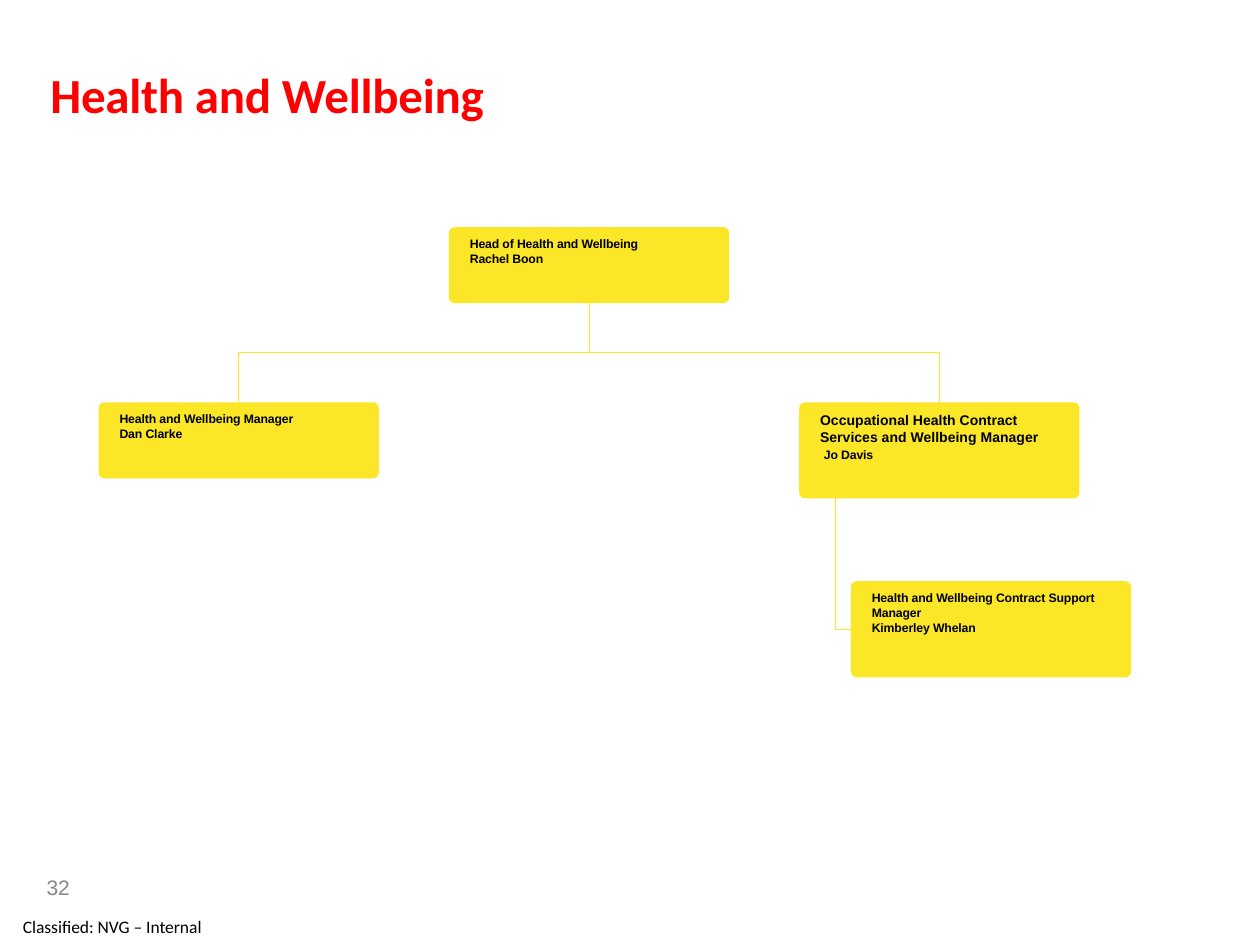
from dataclasses import dataclass

from pptx import Presentation
from pptx.dml.color import RGBColor
from pptx.enum.shapes import MSO_SHAPE
from pptx.enum.text import MSO_ANCHOR, PP_ALIGN
from pptx.util import Inches, Pt

ROUNDED = MSO_SHAPE.ROUNDED_RECTANGLE
TOP, MIDDLE = MSO_ANCHOR.TOP, MSO_ANCHOR.MIDDLE
LEFT, CENTER = PP_ALIGN.LEFT, PP_ALIGN.CENTER


@dataclass(frozen=True)
class Theme:
    """Colours, fonts, type sizes and letter spacing of the slide."""

    yellow: RGBColor = RGBColor(0xFB, 0xE6, 0x27)
    red: RGBColor = RGBColor(0xFF, 0x00, 0x00)
    black: RGBColor = RGBColor(0x00, 0x00, 0x00)
    grey: RGBColor = RGBColor(0x88, 0x88, 0x88)
    heading_font: str = "Calibri"
    body_font: str = "Arial"
    title_size: float = 28
    number_size: float = 12
    footer_size: float = 10
    large_role_size: float = 8
    card_size: float = 7
    tracking: int = -10
    card_tracking: int = -5


THEME = Theme()
CARD_WIDTH = 2.19
SHORT_CARD, TALL_CARD = 0.57, 0.73


def style_paragraph(paragraph, font_name, size, color, bold=False, tracking=0):
    """Format every run of a paragraph."""
    for run in paragraph.runs:
        run.font.name = font_name
        run.font.size = Pt(size)
        run.font.bold = bold
        run.font.color.rgb = color
        if tracking:
            run.font._element.set("spc", str(tracking))


def add_label(slide, box, text, font_name, size, color, bold=False,
              alignment=LEFT, anchor=TOP, tracking=0):
    """Place one line of text in a box without margins."""
    shape = slide.shapes.add_textbox(*map(Inches, box))
    frame = shape.text_frame
    frame.margin_left = frame.margin_right = 0
    frame.margin_top = frame.margin_bottom = 0
    frame.word_wrap = True
    frame.vertical_anchor = anchor
    frame.text = text
    paragraph = frame.paragraphs[0]
    paragraph.alignment = alignment
    style_paragraph(paragraph, font_name, size, color, bold, tracking)


def add_card(slide, left, top, height, role, person, large_role=False):
    """Place a yellow card with a role and the person who holds it."""
    box = (left, top, CARD_WIDTH, height)
    shape = slide.shapes.add_shape(ROUNDED, *map(Inches, box))
    shape.shadow.inherit = False
    shape.adjustments[0] = 0.03 / height
    shape.fill.solid()
    shape.fill.fore_color.rgb = THEME.yellow
    shape.line.color.rgb = THEME.yellow
    shape.line.width = Pt(2.4)
    frame = shape.text_frame
    frame.margin_left = frame.margin_right = Inches(0.14)
    frame.margin_top, frame.margin_bottom = Inches(0.05), 0
    frame.vertical_anchor = TOP
    frame.word_wrap = True
    frame.text = f"{role}\n{person}"
    role_line, person_line = frame.paragraphs
    role_line.alignment = person_line.alignment = LEFT
    role_size, role_tracking = THEME.card_size, THEME.card_tracking
    if large_role:
        role_size, role_tracking = THEME.large_role_size, 0
        person_line.space_before = Pt(1)
        person_line._p.get_or_add_pPr().set("marL", str(Inches(0.03)))
    style_paragraph(role_line, THEME.body_font, role_size, THEME.black, True,
                    role_tracking)
    style_paragraph(person_line, THEME.body_font, THEME.card_size, THEME.black,
                    True, THEME.card_tracking)
    return shape


def add_branches(slide, branches):
    """Draw open branches, each a list of points in EMU, as one thin outline."""
    builder = slide.shapes.build_freeform(*branches[0][0])
    for index, (start, *points) in enumerate(branches):
        if index:
            builder.move_to(*start)
        builder.add_line_segments(points, close=False)
    shape = builder.convert_to_shape()
    shape.shadow.inherit = False
    shape.fill.background()
    shape.line.color.rgb = THEME.yellow
    shape.line.width = Pt(0.48)


def center_x(shape):
    """Return the horizontal centre of a shape."""
    return shape.left + shape.width // 2


def join_children(slide, parent, children):
    """Join a parent to the children in the row below it."""
    start_x, bottom = center_x(parent), parent.top + parent.height
    bar = (bottom + children[0].top) // 2
    add_branches(slide, [
        [(start_x, bottom), (start_x, bar),
         (center_x(child), bar), (center_x(child), child.top)]
        for child in children
    ])


def join_assistant(slide, parent, child):
    """Join a parent to the left side of a card that hangs below it."""
    x = child.left - Inches(0.14)
    middle = child.top + child.height // 2
    add_branches(slide, [[(x, parent.top + parent.height), (x, middle),
                          (child.left, middle)]])


def add_organisation_chart(slide, left, top):
    """Place the chart with its upper left corner at the given point."""
    step = 2.78
    second_row = top + 1.39
    head = add_card(slide, left + step, top, SHORT_CARD,
                    "Head of Health and Wellbeing", "Rachel Boon")
    manager = add_card(slide, left, second_row, SHORT_CARD,
                       "Health and Wellbeing Manager", "Dan Clarke")
    services = add_card(slide, left + 2 * step, second_row, TALL_CARD,
                        "Occupational Health Contract Services and Wellbeing Manager",
                        "Jo Davis", large_role=True)
    support = add_card(slide, left + 2 * step + 0.41, top + 2.81, TALL_CARD,
                       "Health and Wellbeing Contract Support Manager",
                       "Kimberley Whelan")
    join_children(slide, head, [manager, services])
    join_assistant(slide, services, support)


def add_footer(slide, left, top):
    """Place the slide number and the classification line."""
    add_label(slide, (left + 0.37, top, 0.3, 0.21), "32", THEME.body_font,
              THEME.number_size, THEME.grey, tracking=THEME.tracking)
    add_label(slide, (left, top + 0.27, 1.78, 0.29), "Classified: NVG – Internal",
              THEME.heading_font, THEME.footer_size, THEME.black,
              alignment=CENTER, anchor=MIDDLE)


def main():
    """Build the slide and save it."""
    presentation = Presentation()
    presentation.slide_width, presentation.slide_height = Inches(10), Inches(7.5)
    slide = presentation.slides.add_slide(presentation.slide_layouts[6])
    add_label(slide, (0.4, 0.51, 3.6, 0.49), "Health and Wellbeing",
              THEME.heading_font, THEME.title_size, THEME.red, True,
              tracking=THEME.tracking)
    add_organisation_chart(slide, 0.8, 1.82)
    add_footer(slide, 0, 6.94)
    presentation.save("out.pptx")


if __name__ == "__main__":
    main()
